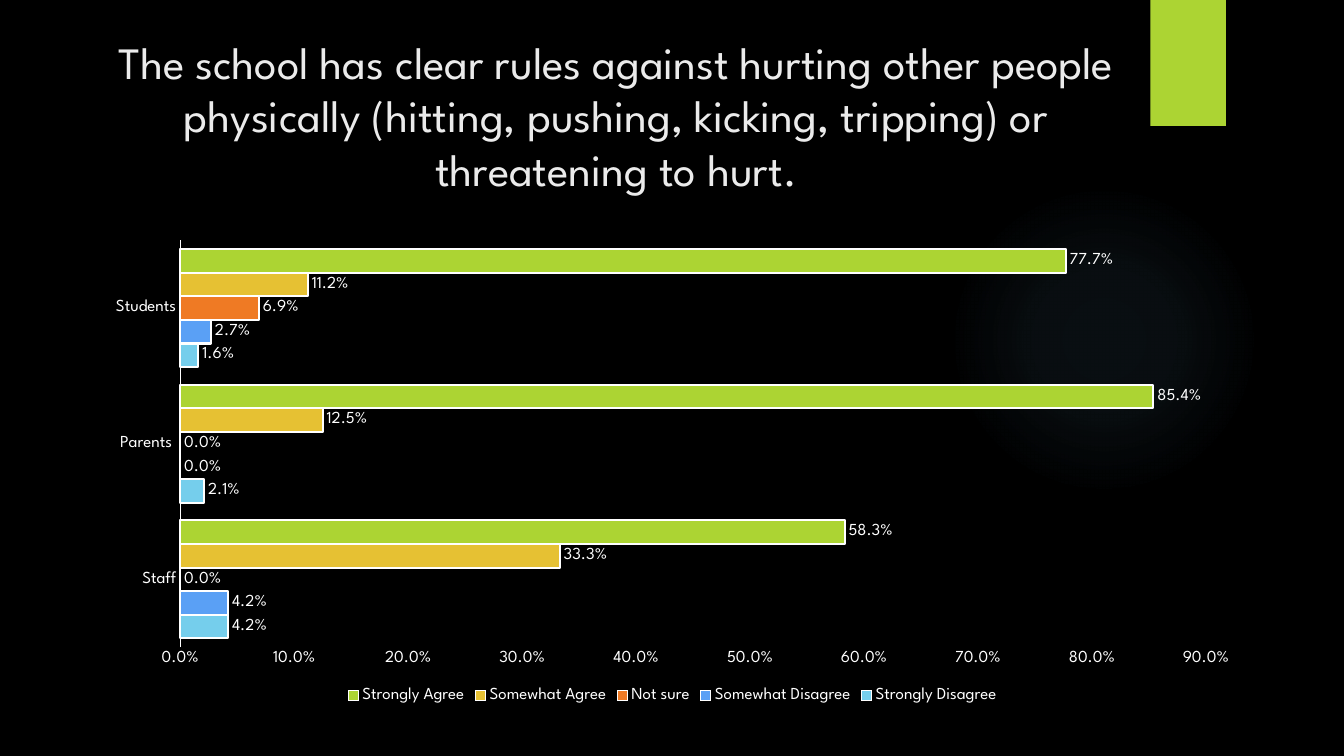
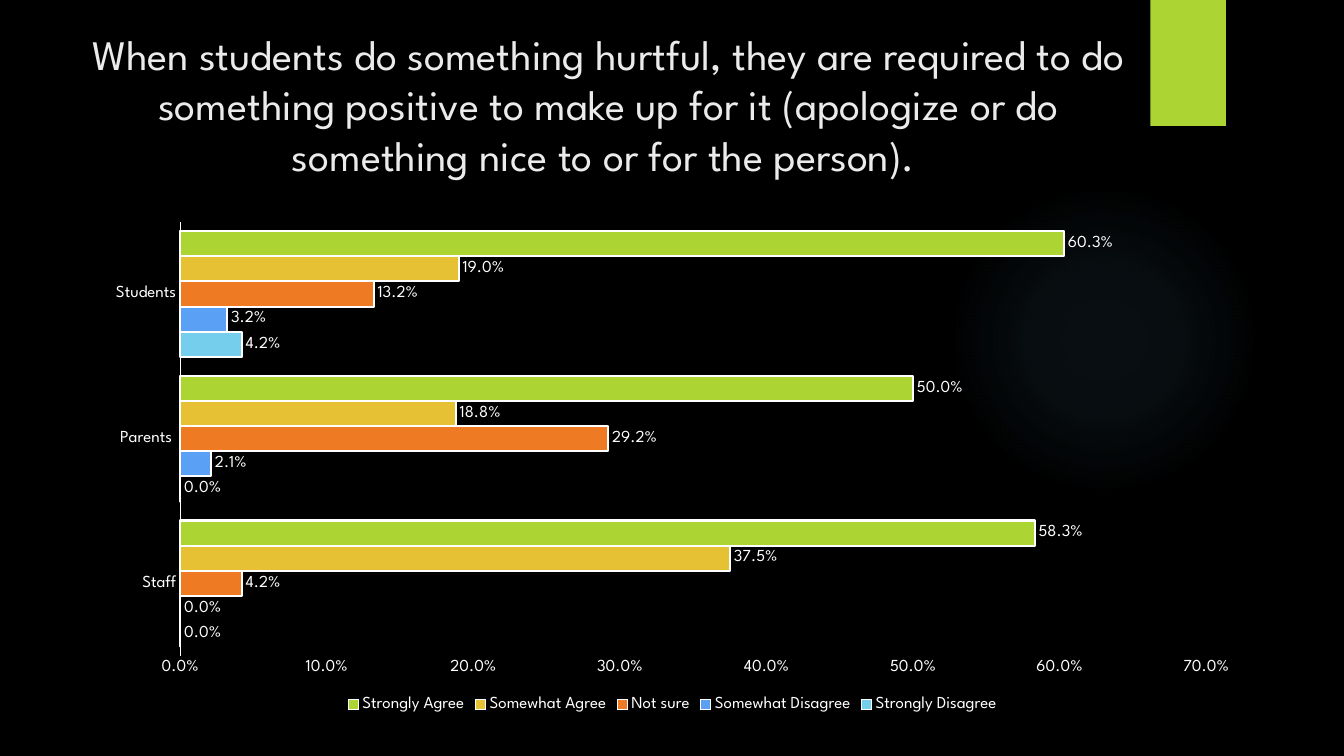
from dataclasses import dataclass

from lxml import etree
from pptx import Presentation
from pptx.chart.data import CategoryChartData
from pptx.dml.color import RGBColor
from pptx.enum.chart import XL_CHART_TYPE, XL_LABEL_POSITION, XL_LEGEND_POSITION, XL_TICK_MARK
from pptx.enum.shapes import MSO_SHAPE
from pptx.enum.text import MSO_ANCHOR, MSO_AUTO_SIZE, PP_ALIGN
from pptx.oxml import parse_xml
from pptx.oxml.ns import nsdecls, qn
from pptx.util import Inches, Pt


@dataclass(frozen=True)
class Theme:
    font: str = "League Spartan"
    background: str = "000000"
    title: str = "EBEBEB"
    text: str = "FFFFFF"
    accent: str = "ACD433"
    glow: str = "7AC4F0"
    chart_size: int = 12
    axis_line: float = 0.75
    bar_line: float = 1.5


THEME = Theme()
GROUPS = ["Staff", "Parents ", "Students"]
ANSWERS = {
    "Strongly Disagree": "75CEEC",
    "Somewhat Disagree": "5AA0F5",
    "Not sure": "EF7A24",
    "Somewhat Agree": "E6C133",
    "Strongly Agree": THEME.accent,
}
# Percentages follow the order of ANSWERS, and within each answer of GROUPS.
QUESTIONS = [
    dict(
        title="The school has clear rules against hurting other people physically "
              "(hitting, pushing, kicking, tripping) or threatening to hurt.",
        title_box=(0.97, 0.29, 10.29, 1.53), title_size=32,
        chart_box=(0.92, 2.29, 11.5, 4.73), axis_maximum=0.9,
        percentages=[(4.2, 2.1, 1.6), (4.2, 0, 2.7), (0, 0, 6.9),
                     (33.3, 12.5, 11.2), (58.3, 85.4, 77.7)],
    ),
    dict(
        title="When students do something hurtful, they are required to do something "
              "positive to make up for it (apologize or do something nice to or for the person). ",
        title_box=(0.55, 0.23, 10.98, 2.06), title_size=30,
        chart_box=(0.92, 2.1, 11.5, 5.01), axis_maximum=0.7,
        percentages=[(0, 0, 4.2), (0, 2.1, 3.2), (4.2, 29.2, 13.2),
                     (37.5, 18.8, 19.0), (58.3, 50.0, 60.3)],
    ),
]


def rgb(color):
    return RGBColor.from_string(color)


def inches(box):
    return [Inches(length) for length in box]


def format_font(font, size=THEME.chart_size, color=THEME.text):
    font.name = THEME.font
    font.size = Pt(size)
    font.bold = False
    font.color.rgb = rgb(color)


def set_text(shape, text, size, color, align=PP_ALIGN.CENTER):
    frame = shape.text_frame
    frame.text = text
    frame.word_wrap = True
    frame.auto_size = MSO_AUTO_SIZE.NONE
    frame.vertical_anchor = MSO_ANCHOR.TOP
    paragraph = frame.paragraphs[0]
    paragraph.alignment = align
    format_font(paragraph.runs[0].font, size, color)


def add_plain_shape(slide, kind, box, color):
    shape = slide.shapes.add_shape(kind, *inches(box))
    shape.shadow.inherit = False
    shape.fill.solid()
    shape.fill.fore_color.rgb = rgb(color)
    shape.line.fill.background()
    return shape


def set_glow(shape, color, stops):
    """Replace the fill by a radial gradient; stops are (position, opacity) in percent."""
    stop_xml = "".join(
        f'<a:gs pos="{position * 1000}"><a:srgbClr val="{color}">'
        f'<a:alpha val="{opacity * 1000}"/></a:srgbClr></a:gs>'
        for position, opacity in stops)
    gradient = parse_xml(
        f'<a:gradFill {nsdecls("a")} rotWithShape="1"><a:gsLst>{stop_xml}</a:gsLst>'
        '<a:path path="circle"><a:fillToRect l="50000" t="50000" r="50000" b="50000"/></a:path>'
        '</a:gradFill>')
    properties = shape.element.spPr
    properties.replace(properties.find(qn("a:solidFill")), gradient)


def set_soft_shadow(shape):
    effects = shape.element.spPr.find(qn("a:effectLst"))
    shadow = etree.SubElement(
        effects, qn("a:outerShdw"), blurRad=str(Pt(3)), dist=str(Pt(2)),
        dir="5400000", rotWithShape="0")
    color = etree.SubElement(shadow, qn("a:srgbClr"), val="000000")
    etree.SubElement(color, qn("a:alpha"), val="45000")


def decorate_layout(layout, slide):
    """Draw the glow and the band on the slide, then move them to its layout."""
    glow = add_plain_shape(slide, MSO_SHAPE.OVAL, (9.41, 1.83, 3.08, 3.08), THEME.glow)
    set_glow(glow, THEME.glow, [(0, 7), (36, 6), (69, 0)])
    band = add_plain_shape(slide, MSO_SHAPE.RECTANGLE, (11.41, 0, 0.75, 1.25), THEME.accent)
    set_soft_shadow(band)
    tree = layout.element.cSld.spTree
    for position, shape in enumerate((glow, band), start=2):
        tree.insert(position, shape.element)


def add_title(slide, text, box, size):
    title = slide.shapes.title
    title.left, title.top, title.width, title.height = inches(box)
    set_text(title, text, size=size, color=THEME.title)


def format_axis(axis):
    axis.has_major_gridlines = False
    axis.major_tick_mark = axis.minor_tick_mark = XL_TICK_MARK.NONE
    format_font(axis.tick_labels.font)


def format_series(series, color):
    series.invert_if_negative = False
    series.format.fill.solid()
    series.format.fill.fore_color.rgb = rgb(color)
    series.format.line.color.rgb = rgb(THEME.text)
    series.format.line.width = Pt(THEME.bar_line)
    labels = series.data_labels
    labels.show_value = True
    labels.position = XL_LABEL_POSITION.OUTSIDE_END
    labels.number_format = "0.0%"
    labels.number_format_is_linked = False
    format_font(labels.font)


def add_answer_chart(slide, box, percentages, axis_maximum):
    data = CategoryChartData(number_format="0.0%")
    data.categories = GROUPS
    for answer, values in zip(ANSWERS, percentages):
        data.add_series(answer, [round(value / 100, 3) for value in values])
    chart = slide.shapes.add_chart(XL_CHART_TYPE.BAR_CLUSTERED, *inches(box), data).chart
    chart.has_title = False
    format_font(chart.font, size=10)

    format_axis(chart.category_axis)
    chart.category_axis.format.line.color.rgb = rgb(THEME.text)
    chart.category_axis.format.line.width = Pt(THEME.axis_line)
    value_axis = chart.value_axis
    format_axis(value_axis)
    value_axis.format.line.fill.background()
    value_axis.minimum_scale, value_axis.maximum_scale = 0, axis_maximum
    value_axis.major_unit = 0.1
    value_axis.tick_labels.number_format = "0.0%"
    value_axis.tick_labels.number_format_is_linked = False

    plot = chart.plots[0]
    plot.gap_width = 75
    plot.vary_by_categories = False
    for series, color in zip(plot.series, ANSWERS.values()):
        format_series(series, color)

    chart.has_legend = True
    chart.legend.position = XL_LEGEND_POSITION.BOTTOM
    chart.legend.include_in_layout = False
    format_font(chart.legend.font)


def main():
    presentation = Presentation()
    presentation.slide_width, presentation.slide_height = Inches(13.33), Inches(7.5)
    background = presentation.slide_master.background.fill
    background.solid()
    background.fore_color.rgb = rgb(THEME.background)
    layout = presentation.slide_layouts.get_by_name("Title Only")

    for question in QUESTIONS:
        slide = presentation.slides.add_slide(layout)
        add_title(slide, question["title"], question["title_box"], question["title_size"])
        add_answer_chart(slide, question["chart_box"], question["percentages"],
                         question["axis_maximum"])
    decorate_layout(layout, presentation.slides[0])
    presentation.save("out.pptx")


if __name__ == "__main__":
    main()
